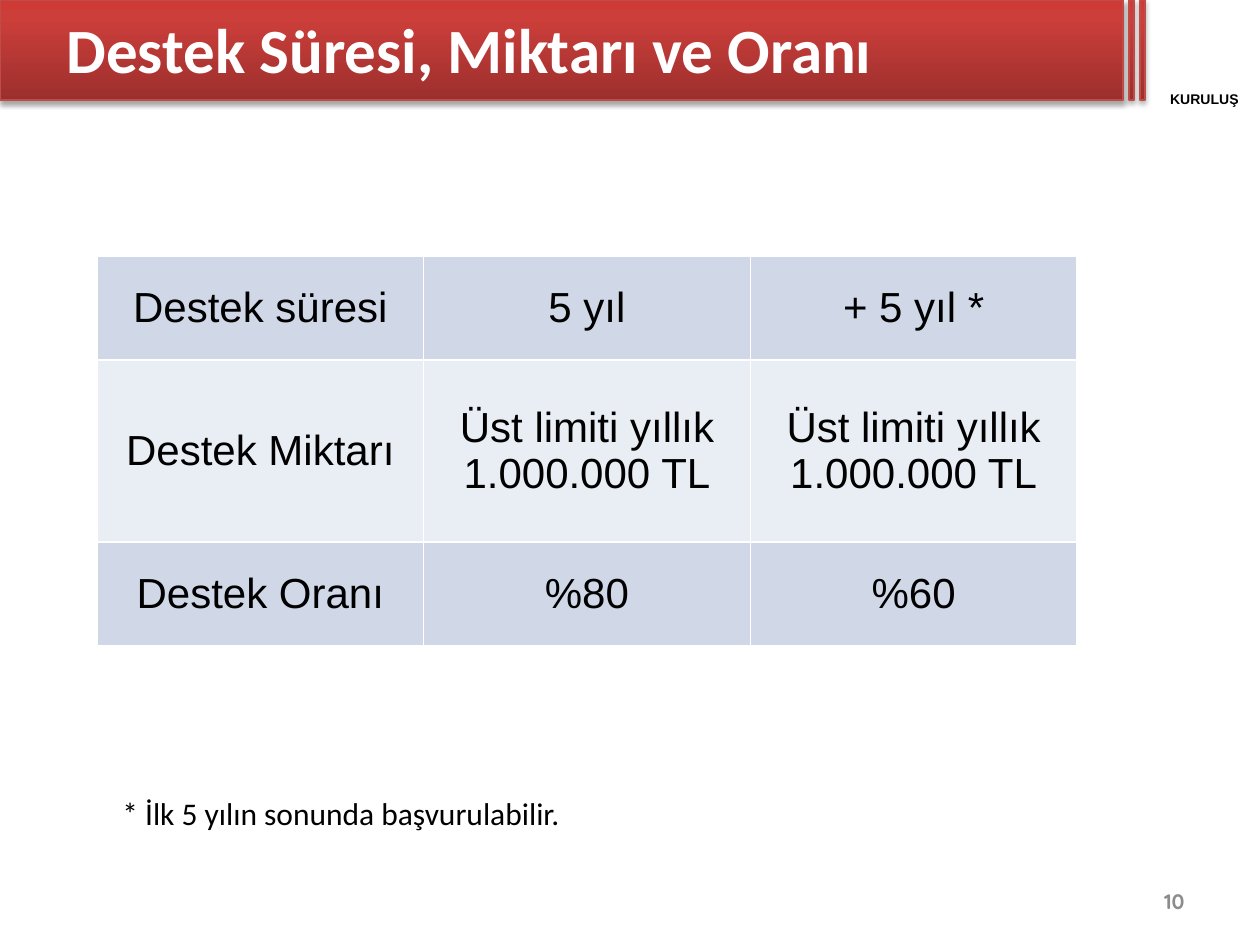
import copy

import lxml.etree
import pptx
import pptx.dml.color
import pptx.enum.dml
import pptx.enum.shapes
import pptx.enum.text
import pptx.oxml
import pptx.oxml.ns
import pptx.util

Align = pptx.enum.text.PP_ALIGN
Mid = pptx.enum.text.MSO_ANCHOR.MIDDLE
HEX = {"dark": "9C2F2D", "red": "CB3E3A", "top": "CE3B37", "edge": "BF4C48",
       "white": "FFFFFF", "black": "000000", "gray": "8C8C8C",
       "odd": "D0D8E8", "even": "E9EDF4"}
SHADOW = (
    f'<a:effectLst {pptx.oxml.ns.nsdecls("a")}>'
    '<a:outerShdw blurRad="40000" dist="23000" dir="5400000" rotWithShape="0">'
    '<a:srgbClr val="000000"><a:alpha val="35000"/></a:srgbClr>'
    '</a:outerShdw></a:effectLst>')


def px(*nums):
    """Turn px, at 126 to the inch, into EMU."""
    return [round(n * 914400 / 126) for n in nums]


def style(para, face, size, tint, bold=False, align=Align.LEFT):
    para.alignment = align
    font = para.font
    font.name, font.size, font.bold = face, pptx.util.Pt(size), bold
    font.color.rgb = pptx.dml.color.RGBColor.from_string(HEX[tint])


deck = pptx.Presentation()
deck.slide_width, deck.slide_height = px(1260, 945)
slide = deck.slides.add_slide(deck.slide_layouts[5])
shapes = slide.shapes

# Red header band and its two thin stripes
for left, width in ((0, 1123), (1129, 5), (1140, 5)):
    bar = shapes.add_shape(pptx.enum.shapes.MSO_SHAPE.RECTANGLE,
                           *px(left, 0, width, 100))
    bar.fill.gradient()
    bar.fill.gradient_angle = 90
    stops = bar.fill._fill._gradFill.gsLst
    stops.append(copy.deepcopy(stops[-1]))
    for stop, place, tint in zip(bar.fill.gradient_stops, (0, 0.8, 1),
                                 ("dark", "red", "top")):
        stop.position = place
        stop.color.rgb = pptx.dml.color.RGBColor.from_string(HEX[tint])
    bar.line.color.rgb = pptx.dml.color.RGBColor.from_string(HEX["edge"])
    bar.line.width = pptx.util.Pt(0.75)
    bar.shadow.inherit = False
    props = bar._element.spPr
    props.replace(props.find(pptx.oxml.ns.qn("a:effectLst")),
                  pptx.oxml.parse_xml(SHADOW))

# Title, brought in front of the band
title = shapes.title
title.left, title.top, title.width, title.height = px(54, 0, 1071, 97)
title.text_frame.text = "Destek Süresi, Miktarı ve Oranı"
title.text_frame.vertical_anchor = Mid
style(title.text_frame.paragraphs[0], "Calibri", 36, "white", True)
shapes._spTree.append(title._element)

# Agency name, page number and footnote
label = shapes.add_textbox(*px(1140, 91, 129, 16)).text_frame
label.margin_left = label.margin_right = 0
label.margin_top = label.margin_bottom = 0
label.word_wrap = True
label.text = "KURULUŞ"
style(label.paragraphs[0], "Arial", 8, "black", True, Align.CENTER)

page = shapes.add_textbox(*px(903, 876, 294, 50)).text_frame
page.word_wrap = True
page.vertical_anchor = Mid
page.text = "10"
style(page.paragraphs[0], "Quicksand", 12, "gray", True, Align.RIGHT)

note = shapes.add_textbox(*px(110, 788, 478, 50)).text_frame
note.word_wrap = False
note.text = "* İlk 5 yılın sonunda başvurulabilir."
style(note.paragraphs[0], "Calibri", 18, "black")

# Support table
LIMIT = "Üst limiti yıllık 1.000.000 TL"
ROWS = (("Destek süresi", "5 yıl", "+ 5 yıl *"),
        ("Destek Miktarı", LIMIT, LIMIT),
        ("Destek Oranı", "%80", "%60"))
table = shapes.add_table(3, 3, *px(97, 256, 980, 390)).table
table.first_row = table.horz_banding = False
for row, height in zip(table.rows, px(104, 182, 104)):
    row.height = height
for r, words in enumerate(ROWS):
    for c, word in enumerate(words):
        cell = table.cell(r, c)
        cell.text = word
        cell.vertical_anchor = Mid
        cell.fill.solid()
        cell.fill.fore_color.rgb = pptx.dml.color.RGBColor.from_string(
            HEX["even" if r % 2 else "odd"])
        style(cell.text_frame.paragraphs[0], "Arial", 24, "black",
              align=Align.CENTER)

deck.save("out.pptx")
